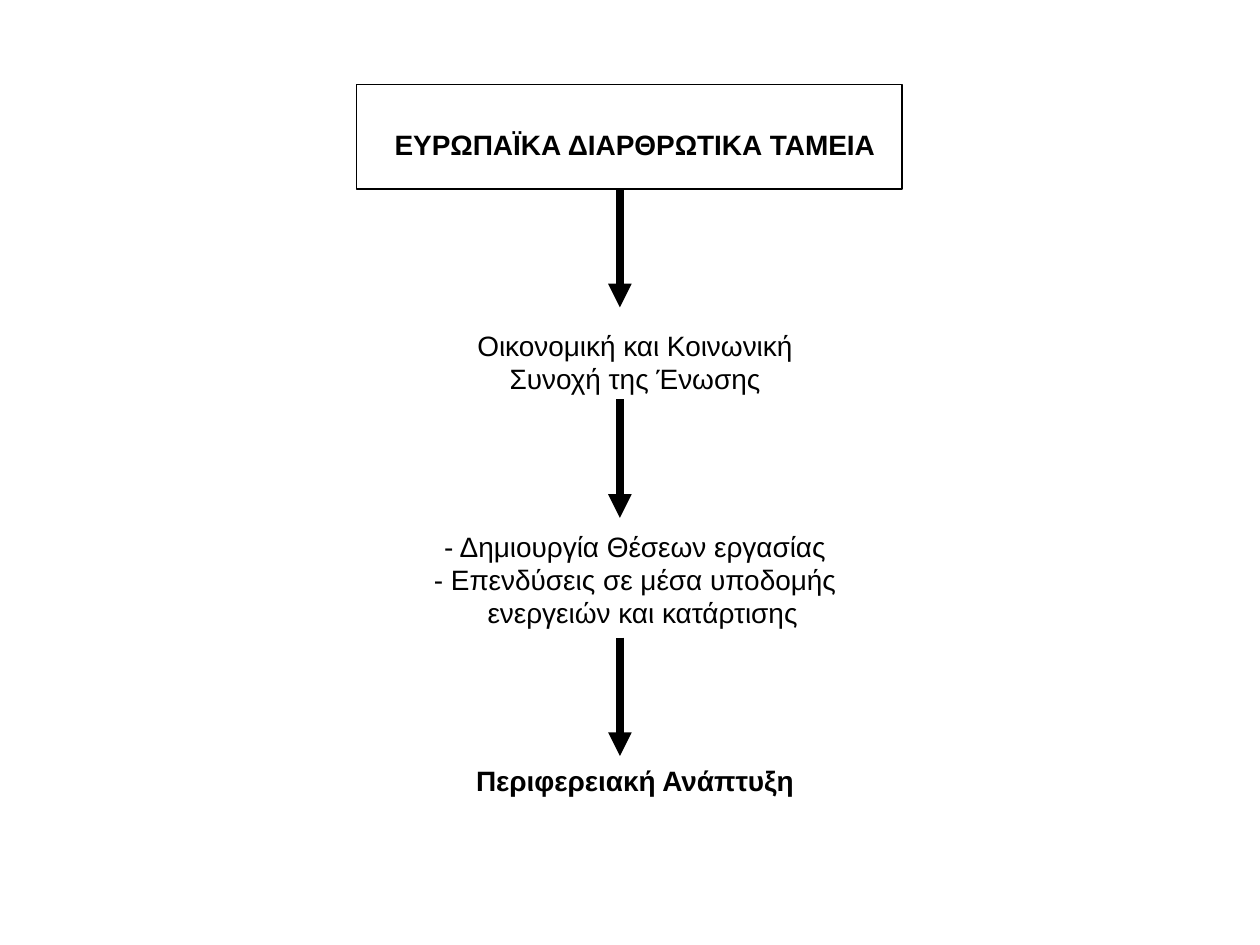
from lxml import etree
from pptx import Presentation
from pptx import util as u
from pptx.dml.color import RGBColor
from pptx.enum import shapes, text
from pptx.oxml.ns import qn

BLACK, WHITE = "000000", "FFFFFF"
SIZE, PITCH = 16, 19.14
FRAME = dict(
    word_wrap=True,
    vertical_anchor=text.MSO_ANCHOR.TOP,
    margin_top=u.Inches(0.51),
    margin_bottom=u.Inches(0.05),
)
STAGES = [
    (0, True, ["ΕΥΡΩΠΑΪΚΑ ΔΙΑΡΘΡΩΤΙΚΑ ΤΑΜΕΙΑ"]),
    (5, False, ["Οικονομική και Κοινωνική", "Συνοχή της Ένωσης"]),
    (4, False, ["- Δημιουργία Θέσεων εργασίας",
                "- Επενδύσεις σε μέσα υποδομής",
                "ενεργειών και κατάρτισης"]),
    (4, True, ["Περιφερειακή Ανάπτυξη"]),
]
INDENTED = STAGES[2][2][-1]
AXIS, DROP = 4.92, 0.94
STARTS = [1.5, 3.17, 5.06]


def color(code):
    return RGBColor.from_string(code)


def style(item, values):
    for name, value in values.items():
        setattr(item, name, value)


def add_box(slide, *place):
    box = slide.shapes.add_shape(shapes.MSO_SHAPE.RECTANGLE, *map(u.Inches, place))
    box.shadow.inherit = False
    box.fill.solid()
    box.fill.fore_color.rgb = color(WHITE)
    box.line.color.rgb = color(BLACK)
    box.line.width = u.Pt(0.75)


def add_line(frame, words, gap, bold):
    first = frame.paragraphs[0]
    para = frame.add_paragraph() if first.runs else first
    style(para, dict(alignment=text.PP_ALIGN.CENTER, line_spacing=u.Pt(PITCH),
                     space_before=u.Pt(gap * PITCH)))
    run = para.add_run()
    run.text = words
    style(run.font, dict(name="Arial", size=u.Pt(SIZE), bold=bold))
    run.font.color.rgb = color(BLACK)
    return para


def add_text(slide, *place):
    frame = slide.shapes.add_textbox(*map(u.Inches, place)).text_frame
    style(frame, FRAME)
    for gap, bold, lines in STAGES:
        for row, words in enumerate(lines):
            para = add_line(frame, words, 0 if row else gap, bold)
            if words == INDENTED:
                para._p.get_or_add_pPr().set("marL", str(u.Inches(0.12)))


def add_arrow(slide, top):
    ends = map(u.Inches, (AXIS, top, AXIS, top + DROP))
    arrow = slide.shapes.add_connector(shapes.MSO_CONNECTOR.STRAIGHT, *ends)
    arrow.line.color.rgb = color(BLACK)
    arrow.line.width = u.Pt(4.5)
    props = arrow._element.spPr
    etree.SubElement(props.find(qn("a:ln")), qn("a:tailEnd"), type="triangle")
    etree.SubElement(props, qn("a:effectLst"))


def main():
    deck = Presentation()
    style(deck, dict(slide_width=u.Inches(10), slide_height=u.Inches(7.5)))
    slide = deck.slides.add_slide(deck.slide_layouts[6])
    add_box(slide, 2.83, 0.67, 4.33, 0.83)
    add_text(slide, 1, 0.5, 8.08, 6.32)
    for top in STARTS:
        add_arrow(slide, top)
    deck.save("out.pptx")


if __name__ == "__main__":
    main()
